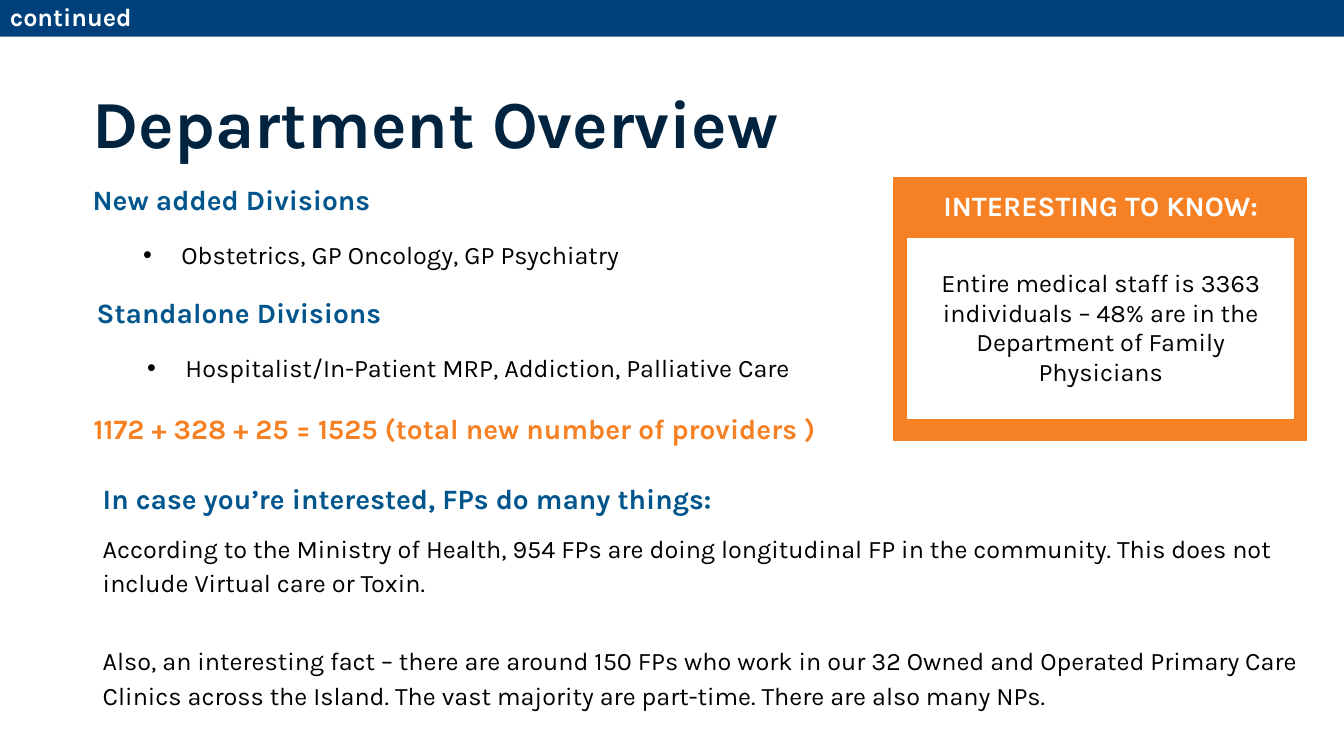
"""Build the Department Overview slide."""
from dataclasses import dataclass
from typing import Any, Optional

import lxml.etree
import pptx
import pptx.dml.color
import pptx.enum.shapes
import pptx.enum.text
import pptx.oxml.ns
import pptx.util

Pt = pptx.util.Pt
FONT = "Karla"
NAVY, BAR_BLUE, BLUE = "002440", "00407A", "00558C"
ORANGE, WHITE, BLACK = "F68125", "FFFFFF", "000000"


@dataclass(frozen=True)
class Line:
    text: str
    size: float = 18
    color: str = BLACK
    bold: bool = False
    spacing: Optional[float] = None
    before: float = 0
    after: float = 0
    bullet: bool = False
    centered: bool = False


@dataclass(frozen=True)
class Block:
    left: float
    top: float
    width: float
    height: float
    lines: tuple[Line, ...]
    margins: tuple[float, float, float, float] = (0, 0, 0, 0)


def rgb(color: str) -> pptx.dml.color.RGBColor:
    return pptx.dml.color.RGBColor.from_string(color)


def paint(target: Any, color: str) -> None:
    target.fill.solid()
    target.fill.fore_color.rgb = rgb(color)


def write(paragraph: Any, text: str, *, size: float, color: str, bold: bool) -> None:
    run = paragraph.add_run()
    run.text = text
    run.font.name = FONT
    run.font.size = Pt(size)
    run.font.bold = bold
    run.font.color.rgb = rgb(color)


def add_bullet(paragraph: Any) -> None:
    properties = paragraph._p.get_or_add_pPr()
    properties.set("marL", str(Pt(63.4)))
    properties.set("indent", str(Pt(-27.4)))
    for tag, key, value in (("a:buFont", "typeface", "Arial"), ("a:buChar", "char", "•")):
        mark = lxml.etree.SubElement(properties, pptx.oxml.ns.qn(tag))
        mark.set(key, value)


def fill_text(frame: Any, lines: tuple[Line, ...]) -> None:
    frame.word_wrap = True
    for index, line in enumerate(lines):
        paragraph = frame.add_paragraph() if index else frame.paragraphs[0]
        align = pptx.enum.text.PP_ALIGN
        paragraph.alignment = align.CENTER if line.centered else align.LEFT
        if line.spacing:
            paragraph.line_spacing = line.spacing
        paragraph.space_before = Pt(line.before)
        paragraph.space_after = Pt(line.after)
        if line.bullet:
            add_bullet(paragraph)
        write(paragraph, line.text, size=line.size, color=line.color, bold=line.bold)


def add_block(slide: Any, block: Block) -> None:
    frame = slide.shapes.add_textbox(
        Pt(block.left), Pt(block.top), Pt(block.width), Pt(block.height)).text_frame
    frame.margin_left, frame.margin_top, frame.margin_right, frame.margin_bottom = (
        Pt(margin) for margin in block.margins)
    fill_text(frame, block.lines)


def add_panel(slide: Any, left: float, top: float, width: float, height: float,
              color: str) -> Any:
    panel = slide.shapes.add_shape(
        pptx.enum.shapes.MSO_SHAPE.RECTANGLE, Pt(left), Pt(top), Pt(width), Pt(height))
    panel.shadow.inherit = False
    paint(panel, color)
    panel.line.fill.background()
    return panel


def add_fact_table(slide: Any) -> None:
    facts = slide.shapes.add_table(2, 1, Pt(648), Pt(126.7), Pt(276.5), Pt(172.8)).table
    facts.first_row = facts.horz_banding = False
    facts._tbl.tblPr[0].text = "{2D5ABB26-0587-4C30-8999-92F81FD0307C}"
    rows = (
        (43.2, ORANGE, Line("INTERESTING TO KNOW:", 20, WHITE, True, centered=True)),
        (129.6, WHITE, Line("Entire medical staff is 3363 individuals – 48% are in the "
                            "Department of Family Physicians", centered=True)),
    )
    for index, (height, color, line) in enumerate(rows):
        facts.rows[index].height = Pt(height)
        cell = facts.cell(index, 0)
        paint(cell, color)
        cell.vertical_anchor = pptx.enum.text.MSO_ANCHOR.MIDDLE
        fill_text(cell.text_frame, (line,))


def heading(text: str) -> Line:
    return Line(text, 20, BLUE, True, spacing=1.14, after=10)


def division_block(left: float, top: float, title: str, members: str) -> Block:
    return Block(left, top, 576, 80.6, (
        heading(title), Line(members, spacing=1.1, before=5, bullet=True)))


BLOCKS = (
    Block(66.2, 53.3, 828, 58.3, (Line("Department Overview", 48, NAVY, True),),
          margins=(0, 4.5, 0, 0)),
    division_block(66.2, 126.7, "New added Divisions",
                   "Obstetrics, GP Oncology, GP Psychiatry"),
    division_block(69.1, 207.4, "Standalone Divisions",
                   "Hospitalist/In-Patient MRP, Addiction, Palliative Care"),
    Block(73.4, 340.6, 874, 188, (
        heading("In case you’re interested, FPs do many things:"),
        Line("According to the Ministry of Health, 954 FPs are doing longitudinal FP in the "
             "community. This does not include Virtual care or Toxin.",
             spacing=1.14, after=10),
        Line("Also, an interesting fact – there are around 150 FPs who work in our 32 Owned "
             "and Operated Primary Care Clinics across the Island. The vast majority are "
             "part-time. There are also many NPs.", spacing=1.14, before=21, after=10))),
    Block(59.8, 290.2, 578.9, 31.7, (
        Line("1172 + 328 + 25 = 1525 (total new number of providers )", 20, ORANGE, True),),
        margins=(7.2, 3.6, 7.2, 3.6)),
)


def main() -> None:
    deck = pptx.Presentation()
    deck.slide_width, deck.slide_height = Pt(960), Pt(540)
    slide = deck.slides.add_slide(deck.slide_layouts[6])
    fact_frame = add_panel(slide, 638.6, 126.7, 294.5, 187.9, ORANGE)
    fact_frame.line.color.rgb = rgb(ORANGE)
    fact_frame.line.width = Pt(1)
    add_fact_table(slide)
    for block in BLOCKS:
        add_block(slide, block)
    banner = add_panel(slide, 0, -2.9, 960, 29.1, BAR_BLUE)
    fill_text(banner.text_frame, (Line("continued", 18, WHITE, True),))
    deck.save("out.pptx")


if __name__ == "__main__":
    main()
